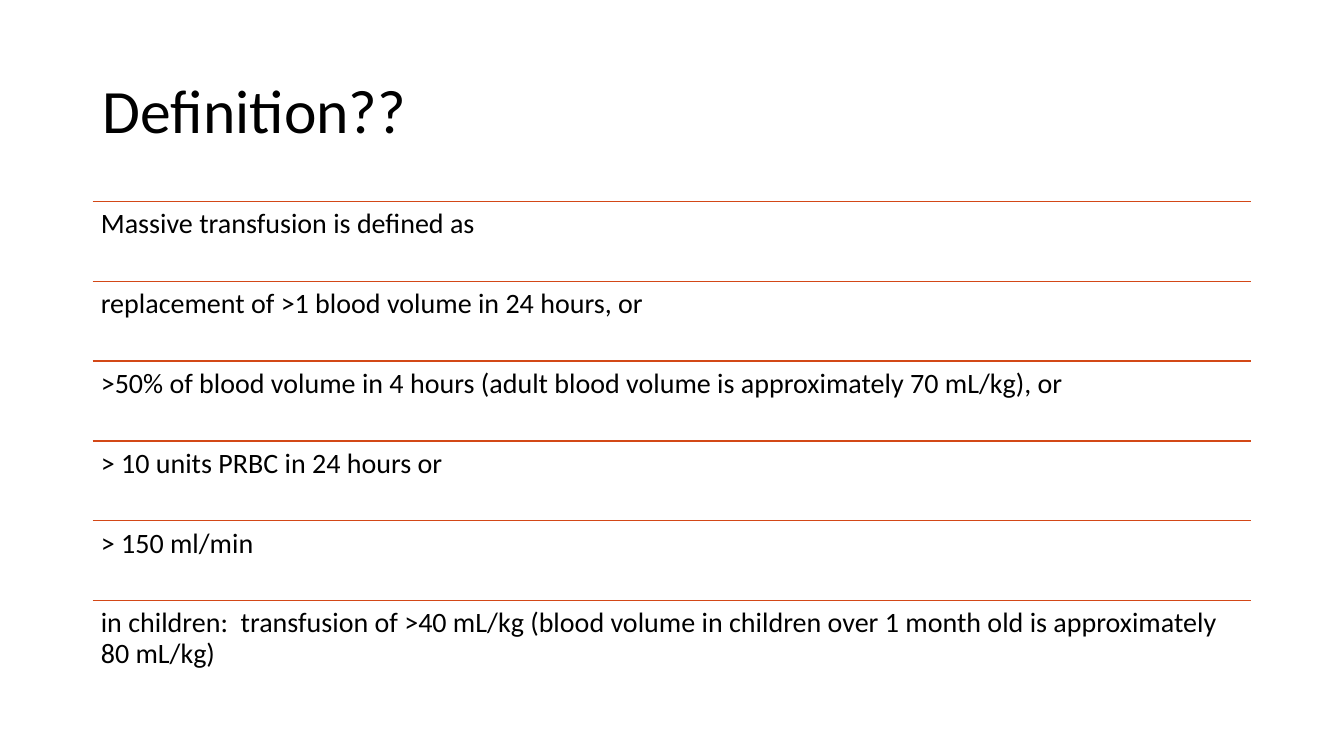
from lxml.etree import SubElement
from pptx import Presentation
from pptx.dml.color import RGBColor
from pptx.enum.shapes import MSO_CONNECTOR as Connector
from pptx.enum.text import MSO_ANCHOR as Anchor
from pptx.oxml.ns import qn
from pptx.util import Inches, Pt

# Content
TITLE = "Definition??"
CRITERIA = [
    "Massive transfusion is defined as",
    "replacement of >1 blood volume in 24 hours, or",
    ">50% of blood volume in 4 hours (adult blood volume is approximately 70 mL/kg), or",
    "> 10 units PRBC in 24 hours or",
    "> 150 ml/min",
    "in children:  transfusion of >40 mL/kg (blood volume in children over 1 month old is approximately 80 mL/kg)",
]

# Colours and layout, in inches
BLACK = RGBColor(0x00, 0x00, 0x00)
ORANGE = RGBColor(0xD3, 0x48, 0x17)
SLIDE_WIDTH, SLIDE_HEIGHT = 13.33, 7.5
MARGIN = 0.92
CONTENT_WIDTH = SLIDE_WIDTH - 2 * MARGIN
TITLE_TOP, TITLE_HEIGHT = 0.4, 1.45
LIST_TOP, LIST_HEIGHT = 2, 4.75
ROW_HEIGHT = LIST_HEIGHT / len(CRITERIA)


def add_text(slide, text, top, height, size, anchor=Anchor.TOP, inset_x=0.08, inset_y=0.08):
    box = slide.shapes.add_textbox(
        Inches(MARGIN), Inches(top), Inches(CONTENT_WIDTH), Inches(height))
    frame = box.text_frame
    frame.word_wrap = True
    frame.vertical_anchor = anchor
    frame.margin_left = frame.margin_right = Inches(inset_x)
    frame.margin_top = frame.margin_bottom = Inches(inset_y)
    paragraph = frame.paragraphs[0]
    paragraph.line_spacing = 0.9
    run = paragraph.add_run()
    run.text = text
    run.font.name = "Calibri"
    run.font.size = Pt(size)
    run.font.color.rgb = BLACK


def add_rule(slide, top):
    rule = slide.shapes.add_connector(
        Connector.STRAIGHT, Inches(MARGIN), Inches(top),
        Inches(MARGIN + CONTENT_WIDTH), Inches(top))
    rule.line.color.rgb = ORANGE
    rule.line.width = Pt(1)
    SubElement(rule._element.spPr, qn("a:effectLst"))


def main():
    presentation = Presentation()
    presentation.slide_width = Inches(SLIDE_WIDTH)
    presentation.slide_height = Inches(SLIDE_HEIGHT)
    slide = presentation.slides.add_slide(presentation.slide_layouts[6])

    # Title
    add_text(slide, TITLE, TITLE_TOP, TITLE_HEIGHT, 44,
             anchor=Anchor.MIDDLE, inset_x=0.1, inset_y=0.05)

    # One ruled row per criterion
    for row, criterion in enumerate(CRITERIA):
        top = LIST_TOP + row * ROW_HEIGHT
        add_rule(slide, top)
        add_text(slide, criterion, top, ROW_HEIGHT, 20)

    presentation.save("out.pptx")


if __name__ == "__main__":
    main()
